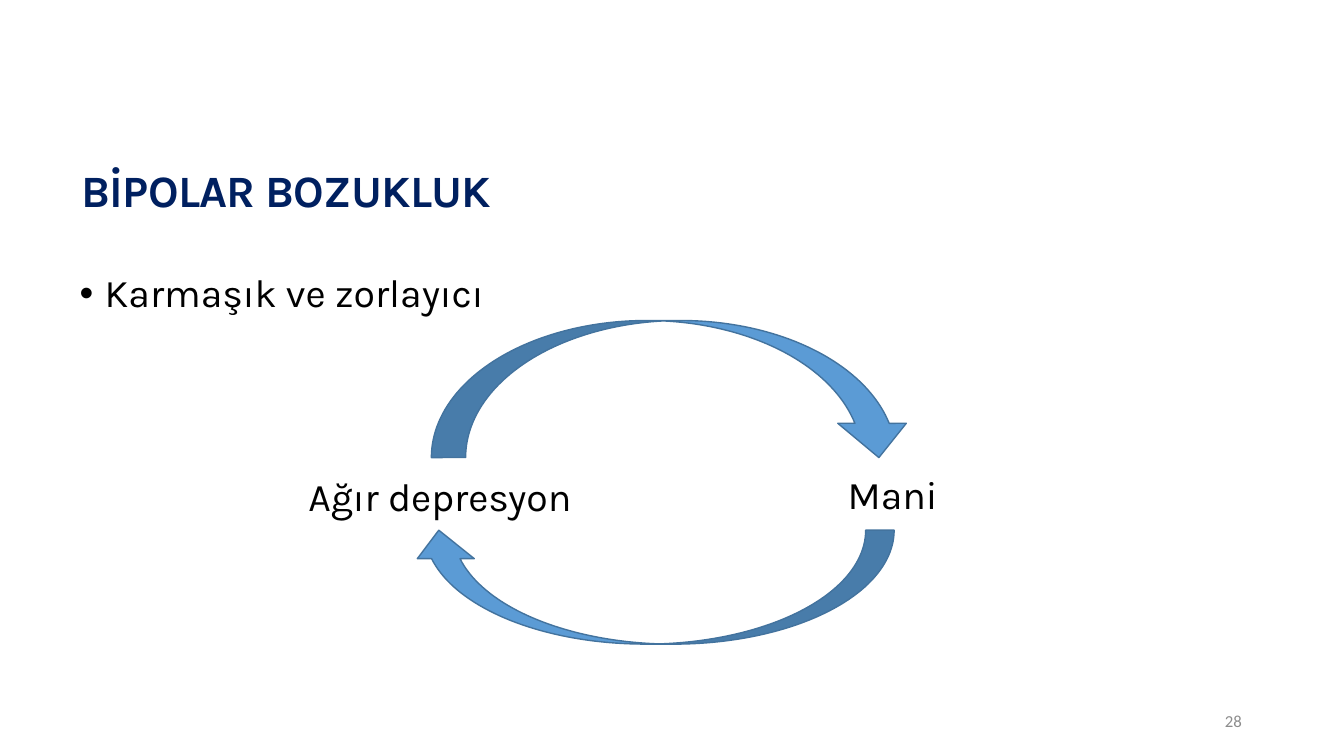
from lxml.etree import SubElement
from pptx import Presentation
from pptx.dml.color import RGBColor
from pptx.enum.shapes import MSO_SHAPE
from pptx.enum.text import MSO_ANCHOR, PP_ALIGN
from pptx.oxml.ns import qn
from pptx.util import Inches, Pt


def color(value):
    return RGBColor.from_string(value)


class SlideBuilder:
    """Holds the style and the current slide; lengths are percent of its size."""

    font = "Karla"
    ink, navy, gray = "000000", "002060", "8C8C8C"
    arrow_fill, arrow_line = "5B9BD5", "43739E"

    def __init__(self, deck):
        self.width, self.height = deck.slide_width, deck.slide_height
        self.page = deck.slides.add_slide(deck.slide_layouts[6])

    def place(self, left, top, width, height):
        return [round(share * size / 100) for share, size in
                zip((left, top, width, height), (self.width, self.height) * 2)]

    def text(self, area, words, size=28, hue=ink, font=font, bold=False,
             anchor=MSO_ANCHOR.TOP, align=PP_ALIGN.LEFT, bullet=None):
        frame = self.page.shapes.add_textbox(*self.place(*area)).text_frame
        frame.word_wrap = True
        frame.vertical_anchor = anchor
        para = frame.paragraphs[0]
        para.add_run().text = words
        para.alignment = align
        if bullet:
            props = para._p.get_or_add_pPr()
            props.set("marL", str(Inches(0.25)))
            props.set("indent", str(-Inches(0.25)))
            SubElement(props, qn("a:buFont")).set("typeface", "Arial")
            SubElement(props, qn("a:buChar")).set("char", bullet)
        para.font.name, para.font.size, para.font.bold = font, Pt(size), bold
        para.font.color.rgb = color(hue)
        return para

    def title(self, area, words):
        para = self.text(area, words, 32, self.navy, bold=True,
                         anchor=MSO_ANCHOR.MIDDLE)
        para.line_spacing = 0.9
        # Slightly tightened letters
        para.runs[0]._r.get_or_add_rPr().set("spc", "-50")

    def statement(self, area, words):
        self.text(area, words, bullet="•").line_spacing = 0.9

    def arrow(self, area, preset, mirrored=False):
        shape = self.page.shapes.add_shape(preset, *self.place(*area))
        shape.shadow.inherit = False
        shape.fill.solid()
        shape.fill.fore_color.rgb = color(self.arrow_fill)
        shape.line.color.rgb = color(self.arrow_line)
        shape.line.width = Pt(1)
        if mirrored:
            shape._element.spPr.find(qn("a:xfrm")).set("flipH", "1")


def main():
    deck = Presentation()
    deck.slide_width, deck.slide_height = Inches(13.33), Inches(7.5)
    slide = SlideBuilder(deck)

    # Heading and statement
    slide.title((5.33, 20.13, 86.25, 10.8), "BİPOLAR BOZUKLUK")
    slide.statement((5.18, 35.6, 87.98, 45.6), "Karmaşık ve zorlayıcı")

    # Cycle between the two states
    slide.arrow((30.53, 70.13, 36, 15.07), MSO_SHAPE.CURVED_UP_ARROW, mirrored=True)
    slide.arrow((32.1, 42.4, 35.85, 18.13), MSO_SHAPE.CURVED_DOWN_ARROW)
    slide.text((22.2, 61.87, 23.1, 7.6), "Ağır depresyon")
    slide.text((62.33, 61.6, 14.4, 7.6), "Mani")

    # Page number
    slide.text((70.65, 92.67, 22.5, 5.33), "28", 12, slide.gray, "Calibri",
               anchor=MSO_ANCHOR.MIDDLE, align=PP_ALIGN.RIGHT)

    deck.save("out.pptx")


if __name__ == "__main__":
    main()
